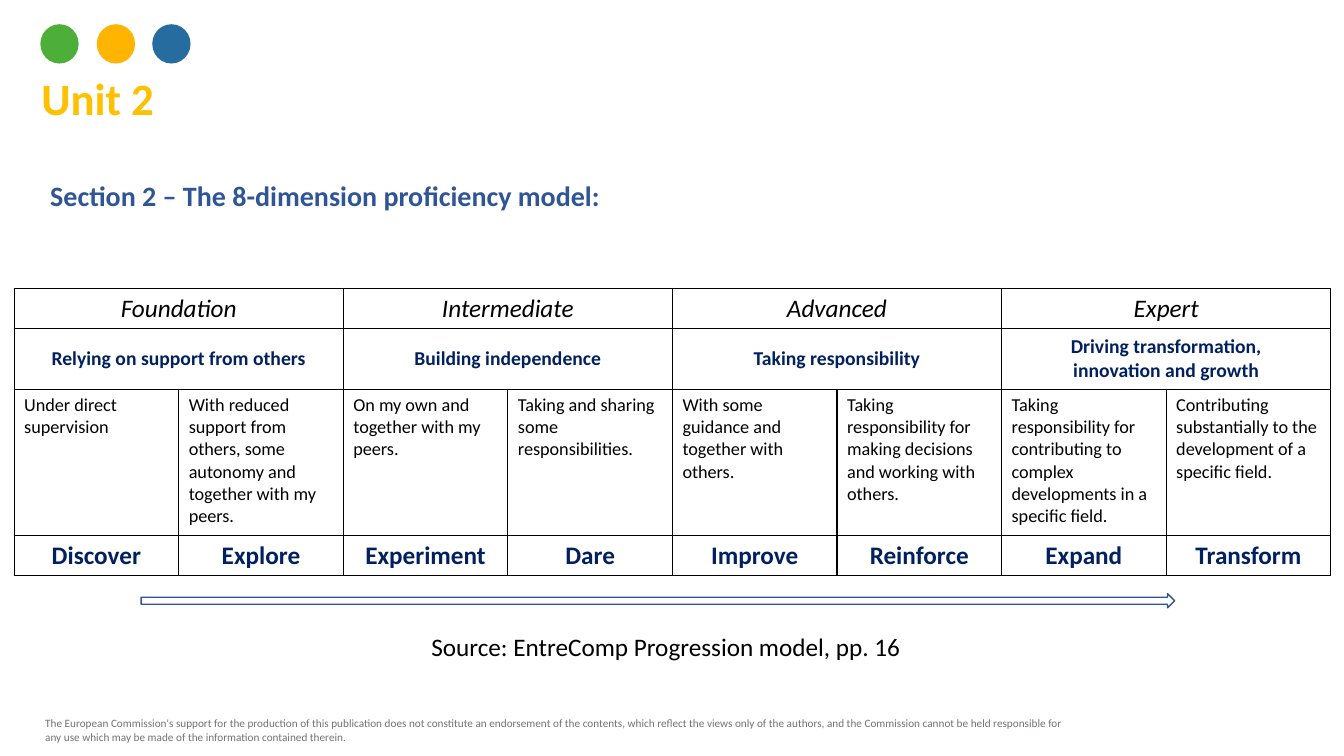
from lxml import etree
from pptx import Presentation
from pptx.dml.color import RGBColor
from pptx.enum import shapes, text
from pptx.oxml import ns
from pptx.util import Inches, Pt

BLACK = RGBColor(0x00, 0x00, 0x00)
GREY = RGBColor(0x76, 0x71, 0x71)
GOLD = RGBColor(0xFF, 0xC0, 0x00)
BLUE = RGBColor(0x2F, 0x55, 0x97)
NAVY = RGBColor(0x00, 0x20, 0x60)
ARROW_BLUE = RGBColor(0x32, 0x54, 0x91)
DOT_COLOURS = [RGBColor(0x4E, 0xAE, 0x3A), RGBColor(0xFF, 0xB5, 0x00), RGBColor(0x26, 0x6C, 0x9F)]
DOT_OFFSETS = [0, 0.56, 1.11]

ROW_HEIGHTS = [0.4, 0.6, 1.45, 0.4]
LEVELS = ["Foundation", "Intermediate", "Advanced", "Expert"]
STAGES = [
    "Relying on support from others",
    "Building independence",
    "Taking responsibility",
    "Driving transformation,\ninnovation and growth",
]
DESCRIPTIONS = [
    "Under direct supervision",
    "With reduced support from others, some autonomy and together with my peers.",
    "On my own and together with my peers.",
    "Taking and sharing some responsibilities.",
    "With some guidance and together with others.",
    "Taking responsibility for making decisions and working with others.",
    "Taking responsibility for contributing to complex developments in a specific field.",
    "Contributing substantially to the development of a specific field.",
]
SKILLS = ["Discover", "Explore", "Experiment", "Dare", "Improve", "Reinforce", "Expand", "Transform"]
DISCLAIMER = (
    "The European Commission's support for the production of this publication does not constitute "
    "an endorsement of the contents, which reflect the views only of the authors, and the Commission "
    "cannot be held responsible for any use which may be made of the information contained therein."
)


def write(frame, content, size, colour, bold=False, italic=False, align=text.PP_ALIGN.LEFT):
    """Fill a text frame with one paragraph per line, all in one format."""
    frame.word_wrap = True
    frame.text = content
    for paragraph in frame.paragraphs:
        paragraph.alignment = align
        for run in paragraph.runs:
            font = run.font
            font.name, font.size = "Calibri", Pt(size)
            font.bold, font.italic = bold, italic
            font.color.rgb = colour


def add_label(slide, box, content, **style):
    """Add a text box at the given box."""
    label = slide.shapes.add_textbox(*map(Inches, box))
    write(label.text_frame, content, **style)


def add_title(slide, box, content):
    """Place and format the title placeholder."""
    title = slide.shapes.title
    title.left, title.top, title.width, title.height = map(Inches, box)
    write(title.text_frame, content, size=32, colour=GOLD, bold=True)
    title.text_frame.vertical_anchor = text.MSO_ANCHOR.TOP
    title.text_frame.auto_size = text.MSO_AUTO_SIZE.NONE
    title.text_frame.paragraphs[0].line_spacing = 1.0


def add_dots(slide, box):
    """Draw the three coloured dots from the left of the box."""
    left, top, width, height = box
    for offset, colour in zip(DOT_OFFSETS, DOT_COLOURS):
        dot = slide.shapes.add_shape(
            shapes.MSO_SHAPE.OVAL, Inches(left + offset), Inches(top), Inches(width), Inches(height))
        dot.shadow.inherit = False
        dot.fill.solid()
        dot.fill.fore_color.rgb = colour
        dot.line.fill.background()


def add_borders(cell):
    """Give a cell a thin black line on every side."""
    properties = cell._tc.get_or_add_tcPr()
    for position, side in enumerate(["lnL", "lnR", "lnT", "lnB"]):
        line = etree.Element(ns.qn(f"a:{side}"), w=str(Pt(1)))
        fill = etree.SubElement(line, ns.qn("a:solidFill"))
        etree.SubElement(fill, ns.qn("a:srgbClr"), val=str(BLACK))
        properties.insert(position, line)


def add_model(slide, box):
    """Build the proficiency table, with paired columns in its two upper rows."""
    centre = text.PP_ALIGN.CENTER
    rows = [
        (LEVELS, dict(size=18, colour=BLACK, italic=True, align=centre)),
        (STAGES, dict(size=14, colour=NAVY, bold=True, align=centre)),
        (DESCRIPTIONS, dict(size=13, colour=BLACK)),
        (SKILLS, dict(size=18, colour=NAVY, bold=True, align=centre)),
    ]
    columns = len(SKILLS)
    model = slide.shapes.add_table(len(rows), columns, *map(Inches, box)).table
    for column in model.columns:
        column.width = Inches(box[2] / columns)
    for row, height in zip(model.rows, ROW_HEIGHTS):
        row.height = Inches(height)
        for cell in row.cells:
            cell.fill.background()
            add_borders(cell)
    for r, (entries, style) in enumerate(rows):
        span = columns // len(entries)
        for i, entry in enumerate(entries):
            cell = model.cell(r, i * span)
            if span > 1:
                cell.merge(model.cell(r, (i + 1) * span - 1))
            write(cell.text_frame, entry, **style)
            if entries is STAGES:
                cell.vertical_anchor = text.MSO_ANCHOR.MIDDLE


def add_progress_arrow(slide, box):
    """Draw the outlined arrow that shows progression."""
    arrow = slide.shapes.add_shape(shapes.MSO_SHAPE.RIGHT_ARROW, *map(Inches, box))
    arrow.shadow.inherit = False
    arrow.fill.background()
    arrow.line.color.rgb = ARROW_BLUE
    arrow.line.width = Pt(1)


def build_unit_slide(deck):
    """Lay out the slide on the proficiency model."""
    slide = deck.slides.add_slide(deck.slide_layouts[5])
    add_label(slide, (0.35, 7.06, 10.46, 0.37), DISCLAIMER, size=8, colour=GREY)
    add_title(slide, (0.31, 0.65, 1.68, 0.64), "Unit 2")
    add_label(slide, (0.4, 1.72, 12.26, 0.44), "Section 2 – The 8-dimension proficiency model:",
              size=20, colour=BLUE, bold=True, align=text.PP_ALIGN.JUSTIFY)
    add_dots(slide, (0.4, 0.24, 0.38, 0.39))
    add_model(slide, (0.14, 2.86, 13.06, sum(ROW_HEIGHTS)))
    add_label(slide, (4.18, 6.21, 4.97, 0.4), "Source: EntreComp Progression model, pp. 16",
              size=18, colour=BLACK)
    add_progress_arrow(slide, (1.4, 5.89, 10.25, 0.14))


def main():
    """Create and save the presentation."""
    deck = Presentation()
    deck.slide_width, deck.slide_height = Inches(13.33), Inches(7.5)
    build_unit_slide(deck)
    deck.save("out.pptx")


if __name__ == "__main__":
    main()
